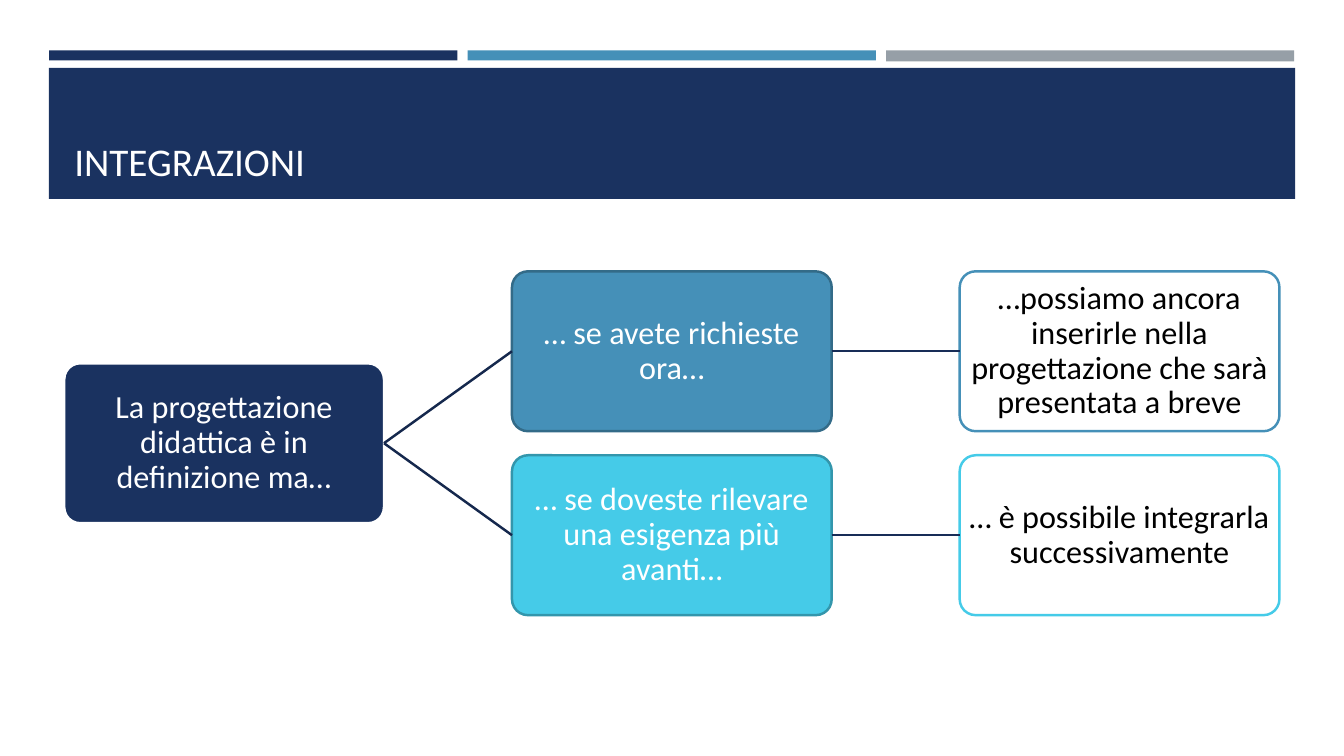
from pptx import Presentation
from pptx.dml.color import RGBColor
from pptx.enum import shapes, text
from pptx.oxml.ns import qn
from pptx.util import Pt
from lxml import etree

# Content: column, row (0.5 lies between the rows), words, fill, line, ink
TITLE = "INTEGRAZIONI"
NODES = {
    "root": (0, 0.5, "La progettazione didattica è in definizione ma…", "navy", "white", "white"),
    "now": (1, 0, "… se avete richieste ora…", "blue", "steel", "white"),
    "add": (2, 0, "…possiamo ancora inserirle nella progettazione che sarà presentata a breve",
            "white", "blue", "black"),
    "later": (1, 1, "… se doveste rilevare una esigenza più avanti…", "cyan", "teal", "white"),
    "merge": (2, 1, "… è possibile integrarla successivamente", "white", "cyan", "black"),
}
LINKS = [("root", "now", "dark"), ("root", "later", "dark"),
         ("now", "add", "deep"), ("later", "merge", "deep")]
STRIPES = [("navy", 7.2), ("blue", 7.2), ("grey", 7.9)]

THEME = {
    "font": "Calibri", "title": 28, "body": 23, "line": 1.75,
    "navy": "1A3260", "blue": "4590B8", "grey": "969FA7", "cyan": "45CBE8",
    "steel": "336B88", "teal": "3396AC", "dark": "15284D", "deep": "182D57",
    "white": "FFFFFF", "black": "000000",
}

# Layout in points
LEFT, TOP = 45.9, 193.8
WIDE, HIGH = 228.4, 114.2
STEP_X, STEP_Y = 319.8, 131.4

deck = Presentation()
deck.slide_width, deck.slide_height = Pt(960), Pt(540)
slide = deck.slides.add_slide(deck.slide_layouts[6])
KIND = shapes.MSO_SHAPE


def tint(name):
    return RGBColor.from_string(THEME[name])


def block(kind, x, y, w, h, fill, line=None):
    shape = slide.shapes.add_shape(kind, Pt(x), Pt(y), Pt(w), Pt(h))
    shape.shadow.inherit = False
    shape.fill.solid()
    shape.fill.fore_color.rgb = tint(fill)
    if line:
        shape.line.color.rgb = tint(line)
        shape.line.width = Pt(THEME["line"])
    else:
        shape.line.fill.background()
    return shape


def write(shape, words, size, ink, align, anchor):
    frame = shape.text_frame
    frame.word_wrap = True
    frame.vertical_anchor = anchor
    para = frame.paragraphs[0]
    para.text = words
    para.alignment = align
    para.font.name = THEME["font"]
    para.font.size = Pt(THEME[size])
    para.font.color.rgb = tint(ink)
    return frame


# Header stripes and title band
for i, (fill, h) in enumerate(STRIPES):
    block(KIND.RECTANGLE, 35.1 + i * 298.9, 36, 291.6, h, fill)
block(KIND.RECTANGLE, 34.9, 48.5, 890.3, 93.6, "navy")
title = slide.shapes.add_textbox(Pt(46), Pt(55.4), Pt(868.3), Pt(80))
write(title, TITLE, "title", "white", text.PP_ALIGN.LEFT, text.MSO_ANCHOR.BOTTOM)

# Boxes of the tree
boxes = {}
for key, (col, row, words, fill, line, ink) in NODES.items():
    box = block(KIND.ROUNDED_RECTANGLE, LEFT + col * STEP_X, TOP + row * STEP_Y,
                WIDE, HIGH, fill, line)
    box.adjustments[0] = 0.1
    frame = write(box, words, "body", ink, text.PP_ALIGN.CENTER, text.MSO_ANCHOR.MIDDLE)
    frame.margin_left = frame.margin_right = Pt(1.4)
    frame.margin_top = frame.margin_bottom = Pt(1.4)
    frame.paragraphs[0].line_spacing = 0.9
    boxes[key] = box

# Links from right side to left side
for start, end, ink in LINKS:
    link = slide.shapes.add_connector(shapes.MSO_CONNECTOR.STRAIGHT, 0, 0, 0, 0)
    link.begin_connect(boxes[start], 3)
    link.end_connect(boxes[end], 1)
    link.line.color.rgb = tint(ink)
    link.line.width = Pt(THEME["line"])
    etree.SubElement(link._element.spPr, qn("a:effectLst"))

deck.save("out.pptx")
